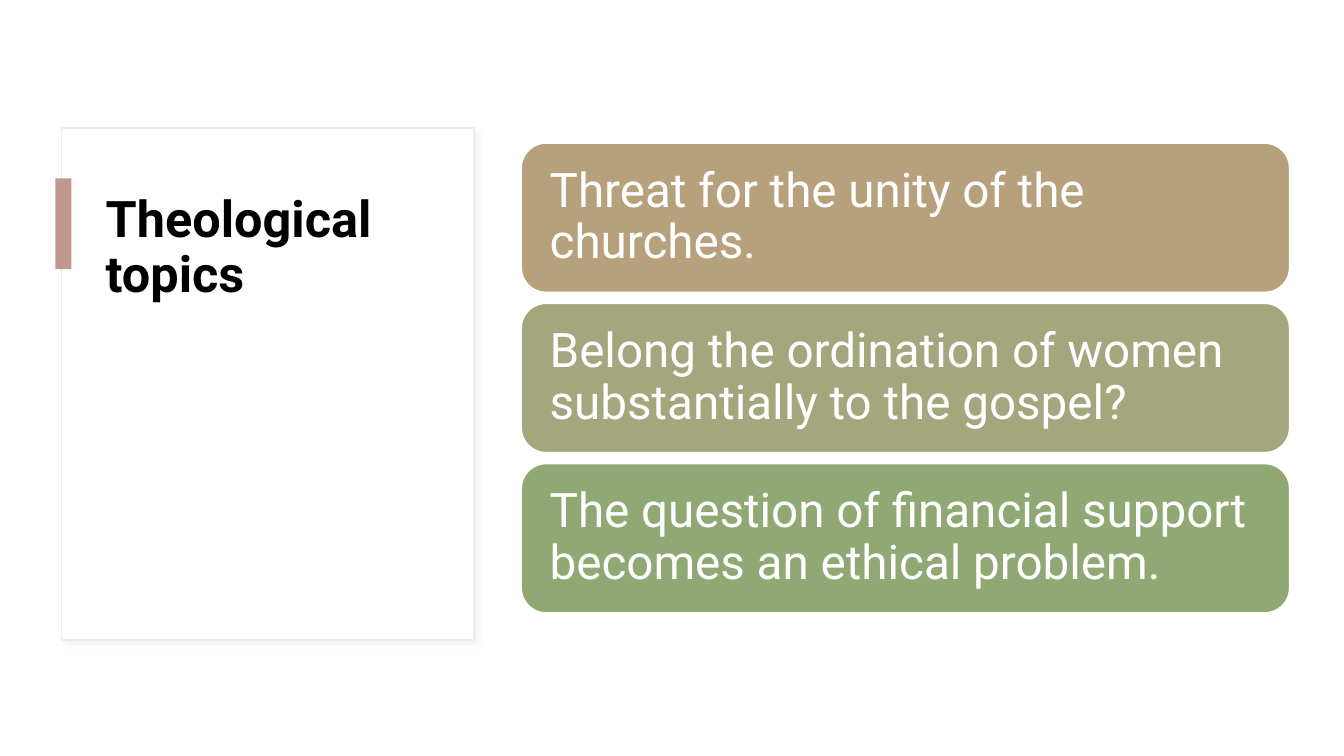
import pptx
import pptx.util
import pptx.dml.color
import pptx.enum.shapes
import pptx.enum.text
import pptx.oxml.ns
import lxml.etree

TITLE = "Theological topics"
TOPICS = [
    ("Threat for the unity of the churches.", "B6A17C"),
    ("Belong the ordination of women substantially to the gospel?", "A4A67E"),
    ("The question of financial support becomes an ethical problem.", "90A974"),
]
THEME = {
    "font": "Roboto", "title": 36, "body": 34, "ink": "000000",
    "paper": "FFFFFF", "edge": "F0ECE5", "mark": "C1988D", "shade": "D9D9D9",
}
PANEL = (0.61, 1.27, 4.09, 5.08)
HEAD = (0.95, 1.88, 3.39, 3.85)
MARK = (0.55, 1.77, 0.16, 0.9)
LEFT, TOP, WIDE, HIGH, STEP = 5.17, 1.42, 7.62, 1.48, 1.59
PAD = 0.21

Inches = pptx.util.Inches
Pt = pptx.util.Pt
KIND = pptx.enum.shapes.MSO_SHAPE
ANCHOR = pptx.enum.text.MSO_ANCHOR
ALIGN = pptx.enum.text.PP_ALIGN


def color(code):
    return pptx.dml.color.RGBColor.from_string(code)


def add_box(slide, kind, place, fill, edge=None):
    box = slide.shapes.add_shape(kind, *map(Inches, place))
    box.shadow.inherit = False
    box.fill.solid()
    box.fill.fore_color.rgb = color(fill)
    if edge:
        box.line.color.rgb = color(edge)
        box.line.width = Pt(1)
    else:
        box.line.fill.background()
    return box


def add_shade(box):
    qn = pptx.oxml.ns.qn
    effects = box.element.spPr.find(qn("a:effectLst"))
    shade = lxml.etree.SubElement(
        effects, qn("a:outerShdw"), blurRad=str(Pt(4)), dist=str(Pt(3)),
        dir="2700000", algn="tl", rotWithShape="0")
    tone = lxml.etree.SubElement(shade, qn("a:srgbClr"), val=THEME["shade"])
    lxml.etree.SubElement(tone, qn("a:alpha"), val="30000")


def set_text(box, text, size, ink, anchor, bold=False):
    frame = box.text_frame
    frame.text = text
    frame.word_wrap = True
    frame.vertical_anchor = anchor
    line = frame.paragraphs[0]
    line.alignment = ALIGN.LEFT
    line.line_spacing = 0.9
    font = line.runs[0].font
    font.name = THEME["font"]
    font.size = Pt(size)
    font.bold = bold
    font.color.rgb = color(ink)


def main():
    deck = pptx.Presentation()
    deck.slide_width = Inches(13.33)
    deck.slide_height = Inches(7.5)
    slide = deck.slides.add_slide(deck.slide_layouts[6])

    panel = add_box(slide, KIND.RECTANGLE, PANEL, THEME["paper"], THEME["edge"])
    add_shade(panel)
    head = slide.shapes.add_textbox(*map(Inches, HEAD))
    set_text(head, TITLE, THEME["title"], THEME["ink"], ANCHOR.TOP, True)
    add_box(slide, KIND.RECTANGLE, MARK, THEME["mark"])

    for row, (text, fill) in enumerate(TOPICS):
        place = (LEFT, TOP + row * STEP, WIDE, HIGH)
        card = add_box(slide, KIND.ROUNDED_RECTANGLE, place, fill, THEME["paper"])
        set_text(card, text, THEME["body"], THEME["paper"], ANCHOR.MIDDLE)
        card.text_frame.margin_left = card.text_frame.margin_right = Inches(PAD)

    deck.save("out.pptx")


if __name__ == "__main__":
    main()
